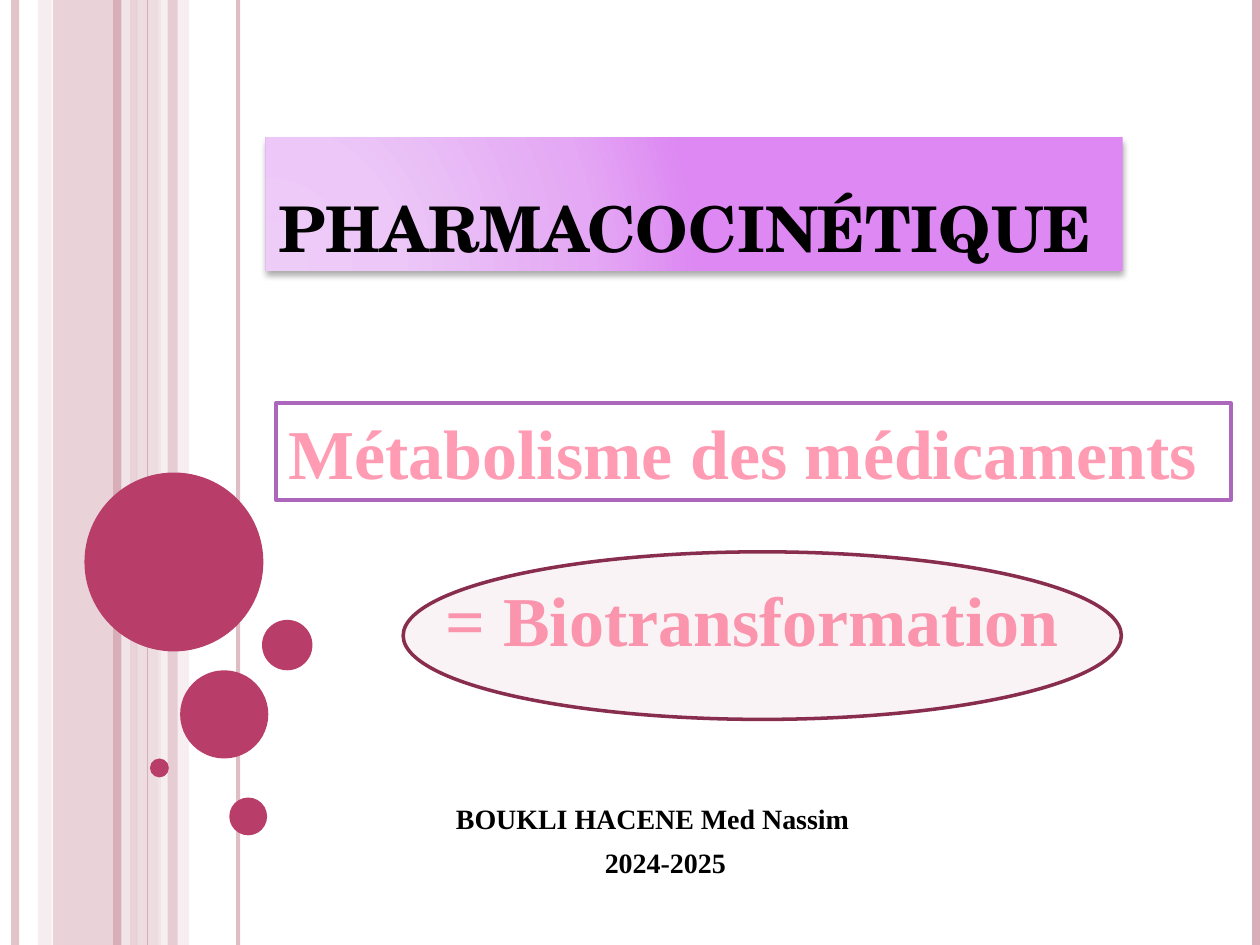
from lxml.etree import SubElement
from pptx import Presentation
from pptx.dml.color import RGBColor as RGB
from pptx.enum.shapes import MSO_CONNECTOR as Connector, MSO_SHAPE as Shape
from pptx.enum.text import MSO_ANCHOR as Anchor, PP_ALIGN as Align
from pptx.oxml import parse_xml
from pptx.oxml.ns import nsdecls, qn
from pptx.util import Inches, Pt

COLUMNS, ROWS = 100, 75
BLACK, WHITE = RGB(0, 0, 0), RGB(255, 255, 255)
ROSE, BLUSH, PALE = RGB(0xD8, 0xAF, 0xB9), RGB(0xE6, 0xCE, 0xD4), RGB(0xF3, 0xE8, 0xEB)
BERRY, WINE = RGB(0xB8, 0x3D, 0x68), RGB(0x88, 0x2D, 0x4D)
PINK, VIOLET = RGB(0xFF, 0x9B, 0xB2), RGB(0xAC, 0x66, 0xBB)
LILACS = [(0, "EECCF8"), (30, "ECC7F7"), (75, "E4A8F4"), (100, "DD88F3")]
SERIF, SCHOOL = "Times New Roman", "TeX Gyre Schola"


class Page:
    """Current slide, measured on a grid of COLUMNS by ROWS."""

    def __init__(self, deck):
        self.slide = deck.slides.add_slide(deck.slide_layouts[6])
        self.column = deck.slide_width / COLUMNS
        self.row = deck.slide_height / ROWS

    def place(self, left, top, width, height):
        return (round(left * self.column), round(top * self.row),
                round(width * self.column), round(height * self.row))

    def fade(self, part, opacity):
        """Make the solid colour of a fill or a line see-through."""
        for color in part.iter(qn("a:srgbClr")):
            SubElement(color, qn("a:alpha"), val=str(opacity * 1000))

    def shape(self, kind, box, fill, opacity=100, line=None, weight=2):
        shape = self.slide.shapes.add_shape(kind, *self.place(*box))
        shape.shadow.inherit = False
        shape.fill.solid()
        shape.fill.fore_color.rgb = fill
        if opacity < 100:
            self.fade(shape._element.spPr, opacity)
        if line is None:
            shape.line.fill.background()
        else:
            shape.line.color.rgb = line
            shape.line.width = Pt(weight)
        return shape

    def stripe(self, left, color, weight, opacity=100):
        x, _, _, bottom = self.place(left, 0, 0, ROWS)
        stripe = self.slide.shapes.add_connector(Connector.STRAIGHT, x, 0, x, bottom)
        stripe.line.color.rgb = color
        stripe.line.width = Pt(weight)
        if opacity < 100:
            self.fade(stripe._element.spPr, opacity)
        SubElement(stripe._element.spPr, qn("a:effectLst"))

    def textbox(self, box):
        return self.slide.shapes.add_textbox(*self.place(*box))

    def letter(self, shape, lines, color, anchor=Anchor.TOP, gap=0, **style):
        """Fill a shape with (text, alignment) lines in one bold style."""
        frame = shape.text_frame
        frame.word_wrap = True
        frame.vertical_anchor = anchor
        style = {"name": SERIF, "bold": True} | style
        for number, (words, align) in enumerate(lines):
            paragraph = frame.add_paragraph() if number else frame.paragraphs[0]
            paragraph.alignment = align
            paragraph.space_before = Pt(gap if number else 0)
            run = paragraph.add_run()
            run.text = words
            run.font.color.rgb = color
            for key, value in style.items():
                setattr(run.font, key, value)

    def glow(self, shape, stops):
        """Radial gradient from the lower left, with a soft shadow below."""
        properties = shape._element.spPr
        marks = "".join(f'<a:gs pos="{at * 1000}"><a:srgbClr val="{color}"/></a:gs>'
                        for at, color in stops)
        gradient = parse_xml(
            f'<a:gradFill {nsdecls("a")} rotWithShape="1"><a:gsLst>{marks}</a:gsLst>'
            '<a:path path="circle"><a:fillToRect l="5000" t="100000" r="120000" '
            'b="10000"/></a:path></a:gradFill>')
        properties.replace(properties.find(qn("a:solidFill")), gradient)
        effects = properties.find(qn("a:effectLst"))
        shadow = SubElement(effects, qn("a:outerShdw"), blurRad=str(Pt(3.5)),
                            dist=str(Pt(2.2)), dir="5400000", rotWithShape="0")
        color = SubElement(shadow, qn("a:srgbClr"), val="000000")
        SubElement(color, qn("a:alpha"), val="32000")


def main():
    deck = Presentation()
    deck.slide_width, deck.slide_height = Inches(10), Inches(7.5)
    page = Page(deck)

    # Vertical bands and stripes
    def band(left, width, color, opacity):
        page.shape(Shape.RECTANGLE, (left, 0, width, ROWS), color, opacity)

    for left, width, color, opacity in [(4.2, 6.7, ROSE, 54), (3, 1.1, BLUSH, 36),
                                        (10.8, 2, BLUSH, 70), (12.5, 2.5, PALE, 71)]:
        band(left, width, color, opacity)
    for left, color, weight, opacity in [
            (1.2, ROSE, 4.5, 73), (10, PALE, 4.5, 83), (9.3, ROSE, 4.5, 100),
            (18.9, ROSE, 2.25, 82), (11.7, ROSE, 0.75, 100), (99.7, ROSE, 4.5, 100)]:
        page.stripe(left, color, weight, opacity)
    band(13.3, 0.8, ROSE, 51)

    # Bubbles
    for left, top, size in [(6.7, 37.5, 14.2), (14.3, 53.2, 7), (11.9, 60.2, 1.5),
                            (18.2, 63.3, 3), (20.8, 49.2, 4)]:
        page.shape(Shape.OVAL, (left, top, size, size), BERRY)

    # Course title
    course = page.shape(Shape.RECTANGLE, (21.1, 10.9, 68, 10.6), WHITE)
    page.glow(course, LILACS)
    page.letter(course, [("PHARMACOCINÉTIQUE", Align.LEFT)], BLACK, Anchor.BOTTOM,
                name=SCHOOL, size=Pt(36))

    # Topic and its synonym, under a tinted ellipse
    topic = page.shape(Shape.RECTANGLE, (21.9, 32, 75.8, 7.7), WHITE, line=VIOLET)
    synonym = page.textbox((34.4, 45.3, 51.2, 7.7))
    for box, words in [(topic, "Métabolisme des médicaments"),
                       (synonym, "= Biotransformation")]:
        page.letter(box, [(words, Align.LEFT)], PINK, size=Pt(40))
    page.shape(Shape.OVAL, (32, 43.8, 57, 13.3), BERRY, 6, WINE)

    # Author and year
    author = page.textbox((35.2, 63.1, 35.2, 8.8))
    page.letter(author, [("BOUKLI HACENE Med Nassim", Align.LEFT),
                         ("2024-2025", Align.CENTER)], BLACK, gap=6, size=Pt(16))

    deck.save("out.pptx")


if __name__ == "__main__":
    main()
